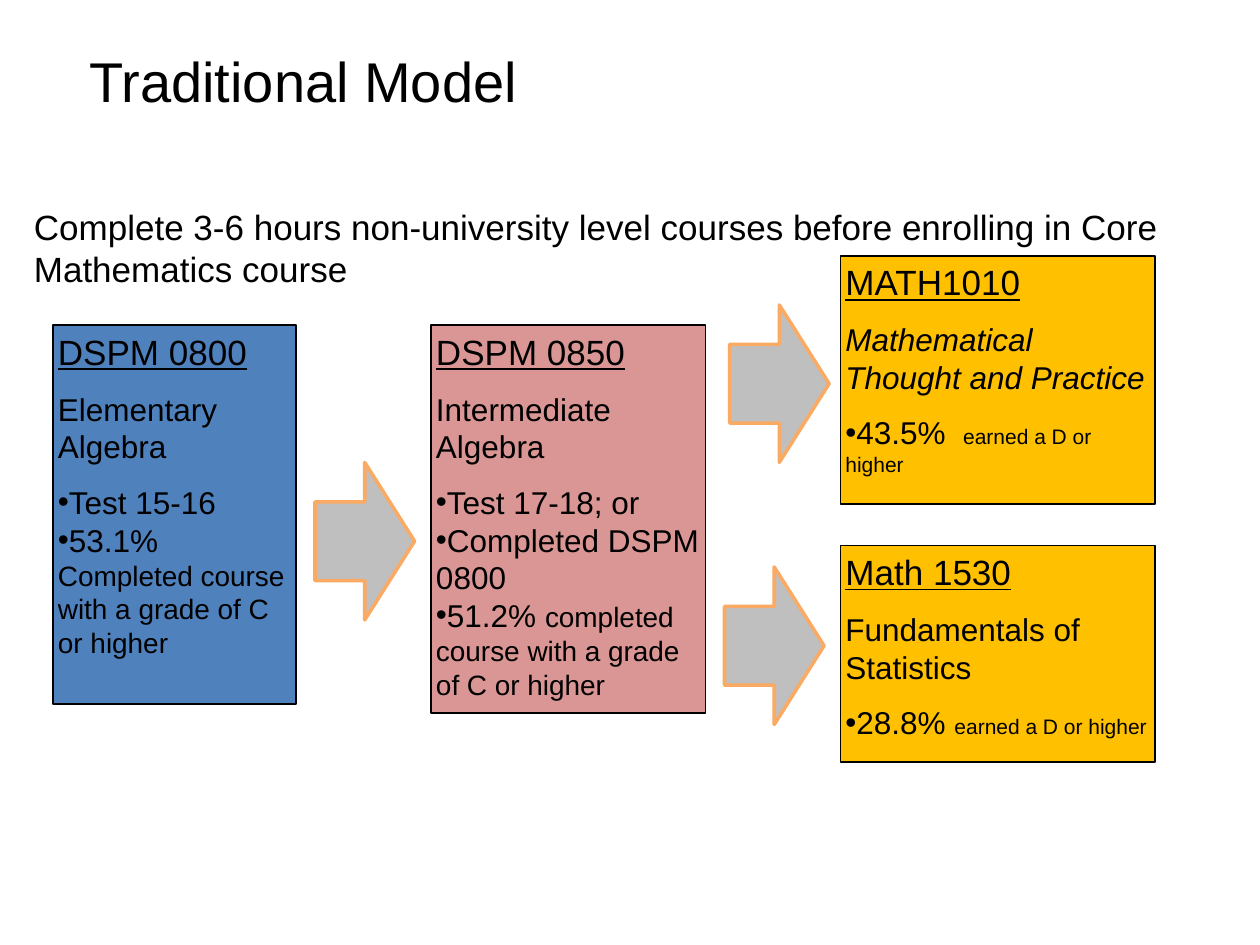
from pptx import Presentation
from pptx.dml.color import RGBColor
from pptx.enum.shapes import MSO_SHAPE as Shape
from pptx.enum.text import MSO_ANCHOR as Anchor, PP_ALIGN as Align
from pptx.oxml.ns import qn
from pptx.util import Inches, Pt
from lxml.etree import SubElement

BLACK = "000000"


def color(hex_value):
    return RGBColor.from_string(hex_value)


def add_text(paragraph, runs, bullet=False, gap=0):
    """Fill a paragraph with (text, size, style) runs, gap points below the previous one."""
    paragraph.alignment = Align.LEFT
    paragraph.space_before = Pt(gap)
    if bullet:
        properties = paragraph._p.get_or_add_pPr()
        properties.set("marL", "0")
        properties.set("indent", "0")
        bullet_color = SubElement(properties, qn("a:buClr"))
        SubElement(bullet_color, qn("a:srgbClr"), val=BLACK)
        SubElement(properties, qn("a:buFont"), typeface="Arial")
        SubElement(properties, qn("a:buChar"), char="•")
    for text, size, style in runs:
        run = paragraph.add_run()
        run.text = text
        run.font.name = "Arial"
        run.font.size = Pt(size)
        run.font.color.rgb = color(BLACK)
        run.font.underline = style == "underline"
        run.font.italic = style == "italic"


presentation = Presentation()
presentation.slide_width = Inches(10)
presentation.slide_height = Inches(7.5)
slide = presentation.slides.add_slide(presentation.slide_layouts[5])

title = slide.shapes.title
title.left, title.top = Inches(0.67), Inches(0.33)
title.width, title.height = Inches(7.85), Inches(0.92)
add_text(title.text_frame.paragraphs[0], [("Traditional Model", 32, "")])

intro = slide.shapes.add_textbox(Inches(0.17), Inches(1.58), Inches(9.58), Inches(1.08))
intro.text_frame.word_wrap = True
add_text(intro.text_frame.paragraphs[0], [
    ("Complete 3-6 hours non-university level courses before enrolling in "
     "Core Mathematics course", 20, "")])

# Position, fill, course code, (course name, style), then (bulleted, runs) details
courses = [
    ((0.42, 2.58, 1.93, 3.01), "4F81BD", "DSPM 0800", ("Elementary Algebra", ""), [
        (True, [("Test 15-16", 18, "")]),
        (True, [("53.1%", 18, "")]),
        (False, [("Completed course with a grade of C or higher", 16, "")]),
    ]),
    ((3.42, 2.58, 2.18, 3.08), "D99694", "DSPM 0850", ("Intermediate Algebra", ""), [
        (True, [("Test 17-18; or", 18, "")]),
        (True, [("Completed DSPM 0800", 18, "")]),
        (True, [("51.2% ", 18, ""),
                ("completed course with a grade of C or higher", 16, "")]),
    ]),
    ((6.67, 2.03, 2.5, 1.97), "FFC000", "MATH1010",
     ("Mathematical Thought and Practice", "italic"), [
        (True, [("43.5%  ", 18, ""), ("earned a D or higher", 12, "")]),
    ]),
    ((6.67, 4.33, 2.5, 1.72), "FFC000", "Math 1530", ("Fundamentals of Statistics", ""), [
        (True, [("28.8% ", 18, ""), ("earned a D or higher", 12, "")]),
    ]),
]
frames = [title.text_frame]
for position, fill, code, (name, style), details in courses:
    box = slide.shapes.add_shape(Shape.RECTANGLE, *map(Inches, position))
    box.shadow.inherit = False
    box.fill.solid()
    box.fill.fore_color.rgb = color(fill)
    box.line.color.rgb = color(BLACK)
    box.line.width = Pt(1)
    frame = box.text_frame
    frames.append(frame)
    add_text(frame.paragraphs[0], [(code, 20, "underline")])
    add_text(frame.add_paragraph(), [(name, 18, style)], gap=10)
    for index, (bulleted, runs) in enumerate(details):
        add_text(frame.add_paragraph(), runs, bulleted, gap=0 if index else 10)

for frame in frames:
    frame.word_wrap = True
    frame.vertical_anchor = Anchor.TOP
    frame.margin_left = frame.margin_right = Inches(0.04)
    frame.margin_top = frame.margin_bottom = Inches(0.04)

for left, top in [(2.5, 3.67), (5.79, 2.42), (5.75, 4.5)]:
    arrow = slide.shapes.add_shape(
        Shape.RIGHT_ARROW, Inches(left), Inches(top), Inches(0.79), Inches(1.25))
    arrow.shadow.inherit = False
    arrow.fill.solid()
    arrow.fill.fore_color.rgb = color("BFBFBF")
    arrow.line.color.rgb = color("FAAA63")
    arrow.line.width = Pt(2)

presentation.save("out.pptx")
